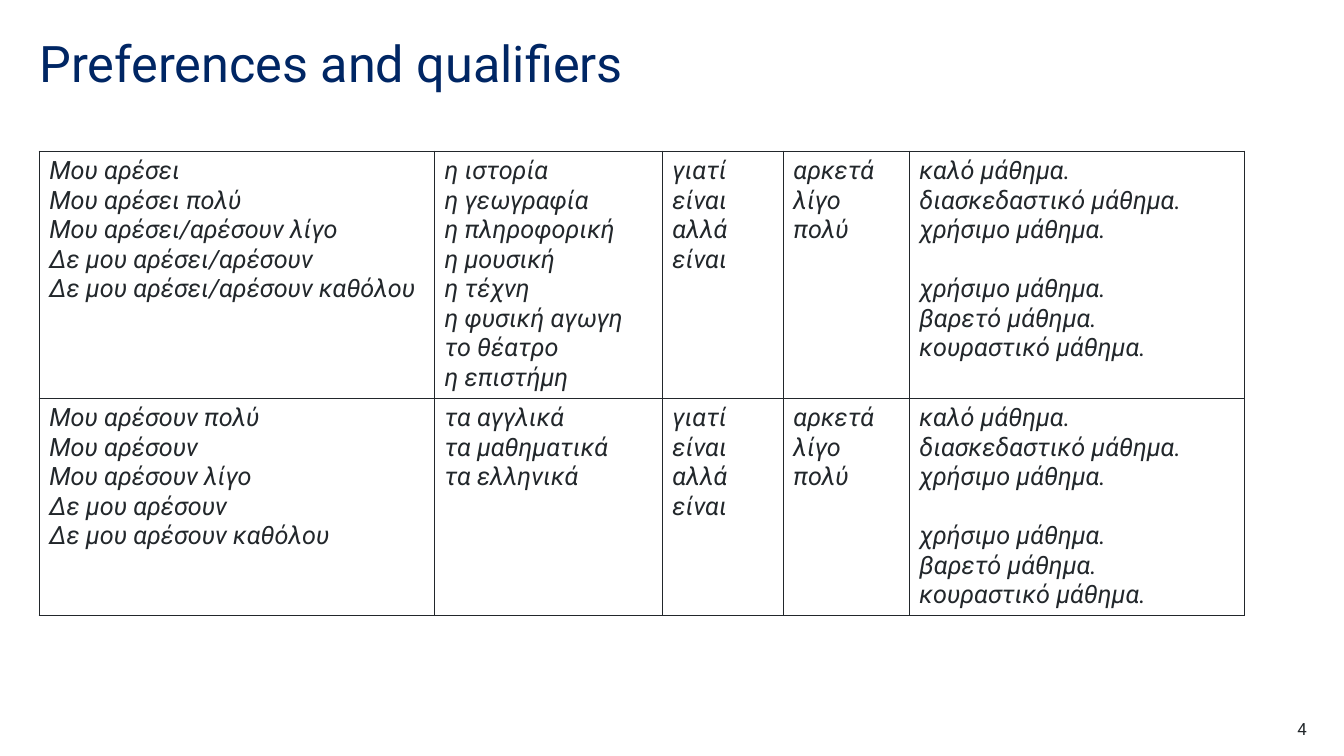
from lxml import etree
from pptx import Presentation
from pptx.dml.color import RGBColor
from pptx.enum import text
from pptx.oxml import ns
from pptx.util import Inches, Pt

TITLE = "Preferences and qualifiers"
PAGE_NUMBER = "4"
FONT, NAVY, INK = "Roboto", "002664", "22272B"

REASONS = [["γιατί είναι", "αλλά είναι"]]
QUALIFIERS = [["αρκετά", "λίγο", "πολύ"]]
OPINIONS = [
    ["καλό μάθημα.", "διασκεδαστικό μάθημα.", "χρήσιμο μάθημα."],
    ["χρήσιμο μάθημα.", "βαρετό μάθημα.", "κουραστικό μάθημα."],
]
# Each cell is a list of groups of lines; groups are set apart by a gap.
ROWS = [
    [
        [["Μου αρέσει", "Μου αρέσει πολύ", "Μου αρέσει/αρέσουν λίγο",
          "Δε μου αρέσει/αρέσουν", "Δε μου αρέσει/αρέσουν καθόλου"]],
        [["η ιστορία", "η γεωγραφία", "η πληροφορική", "η μουσική",
          "η τέχνη", "η φυσική αγωγη", "το θέατρο", "η επιστήμη"]],
        REASONS, QUALIFIERS, OPINIONS,
    ],
    [
        [["Μου αρέσουν πολύ", "Μου αρέσουν", "Μου αρέσουν λίγο",
          "Δε μου αρέσουν", "Δε μου αρέσουν καθόλου"]],
        [["τα αγγλικά", "τα μαθηματικά", "τα ελληνικά"]],
        REASONS, QUALIFIERS, OPINIONS,
    ],
]
COLUMN_WIDTHS = [3.92, 2.26, 1.2, 1.25, 3.32]
ROW_HEIGHTS = [2.45, 2.15]
LEFT, TABLE_TOP = 0.39, 1.5
GROUP_GAP = Pt(21.1)


def color(value):
    return RGBColor.from_string(value)


def add_run(paragraph, words, size, ink, italic=False):
    run = paragraph.add_run()
    run.text = words
    run.font.name, run.font.size, run.font.italic = FONT, Pt(size), italic
    run.font.color.rgb = color(ink)


def clear_margins(frame):
    frame.margin_left = frame.margin_top = 0
    frame.margin_right = frame.margin_bottom = 0
    frame.word_wrap = True
    frame.vertical_anchor = text.MSO_ANCHOR.TOP


def add_borders(cell):
    properties = cell._tc.get_or_add_tcPr()
    for position, side in enumerate(("lnL", "lnR", "lnT", "lnB")):
        line = etree.Element(ns.qn(f"a:{side}"), w=str(Pt(1)))
        fill = etree.SubElement(line, ns.qn("a:solidFill"))
        etree.SubElement(fill, ns.qn("a:srgbClr"), val=INK)
        properties.insert(position, line)


def fill_cell(cell, groups):
    cell.fill.background()
    add_borders(cell)
    frame = cell.text_frame
    paragraph = frame.paragraphs[0]
    for group_index, group in enumerate(groups):
        for line_index, words in enumerate(group):
            if group_index or line_index:
                paragraph = frame.add_paragraph()
            if group_index and not line_index:
                paragraph.space_before = GROUP_GAP
            add_run(paragraph, words, 18, INK, italic=True)


def main():
    presentation = Presentation()
    presentation.slide_width, presentation.slide_height = Inches(13.33), Inches(7.5)
    slide = presentation.slides.add_slide(presentation.slide_layouts[5])

    title = slide.shapes.title
    title.left, title.top = Inches(LEFT), Inches(0.39)
    title.width, title.height = Inches(11.02), Inches(1.1)
    clear_margins(title.text_frame)
    paragraph = title.text_frame.paragraphs[0]
    paragraph.alignment = text.PP_ALIGN.LEFT
    paragraph.line_spacing = 0.9
    add_run(paragraph, TITLE, 36, NAVY)

    table = slide.shapes.add_table(
        len(ROWS), len(COLUMN_WIDTHS), Inches(LEFT), Inches(TABLE_TOP),
        Inches(sum(COLUMN_WIDTHS)), Inches(sum(ROW_HEIGHTS))).table
    table.first_row = table.horz_banding = False
    for column, width in zip(table.columns, COLUMN_WIDTHS):
        column.width = Inches(width)
    for row, height, contents in zip(table.rows, ROW_HEIGHTS, ROWS):
        row.height = Inches(height)
        for cell, groups in zip(row.cells, contents):
            fill_cell(cell, groups)

    number = slide.shapes.add_textbox(
        Inches(12.17), Inches(7.13), Inches(0.79), Inches(0.2))
    clear_margins(number.text_frame)
    paragraph = number.text_frame.paragraphs[0]
    paragraph.alignment = text.PP_ALIGN.RIGHT
    add_run(paragraph, PAGE_NUMBER, 12, INK)

    presentation.save("out.pptx")


if __name__ == "__main__":
    main()
